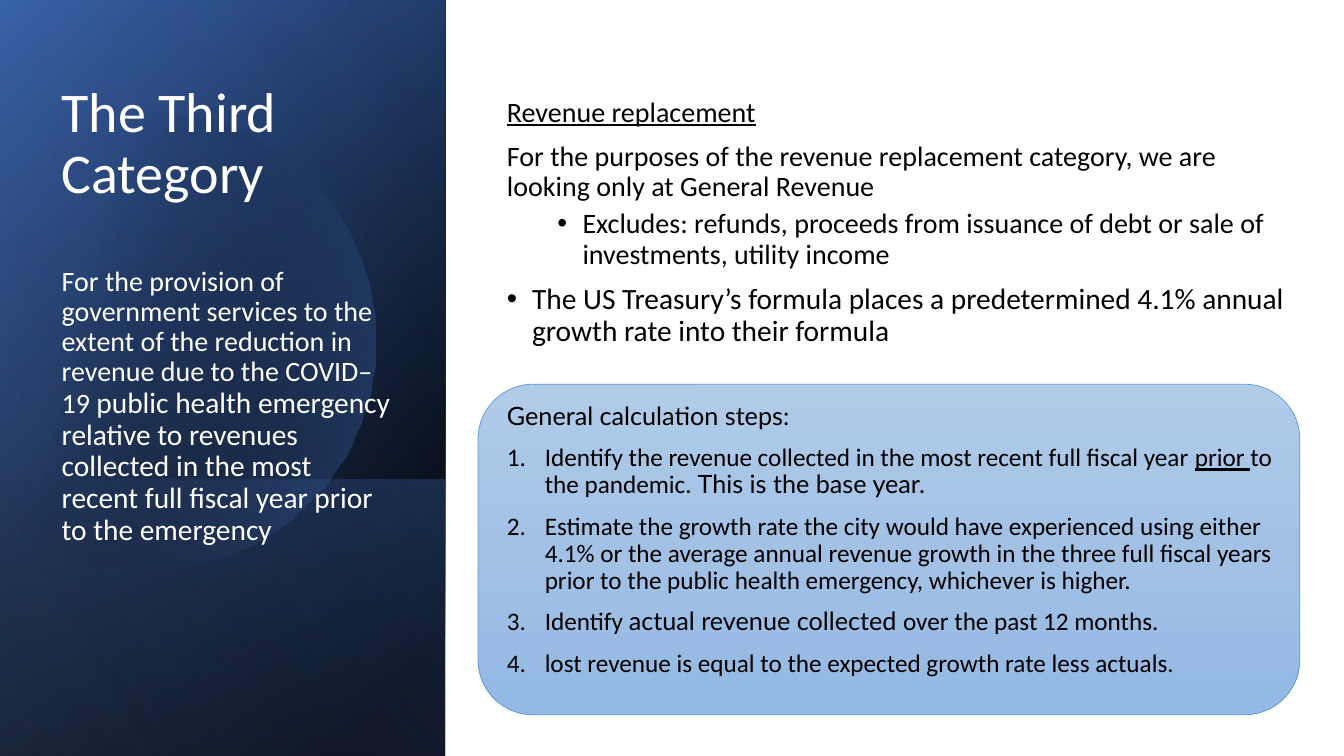
from math import cos, radians, sin

from lxml import etree
from pptx import Presentation
from pptx.dml.color import RGBColor
from pptx.enum import shapes, text
from pptx.oxml import ns
from pptx.util import Pt

BLACK = RGBColor(0x00, 0x00, 0x00)
WHITE = RGBColor(0xFF, 0xFF, 0xFF)
NAVY = RGBColor(0x2F, 0x55, 0x97)
BLUE = RGBColor(0x44, 0x72, 0xC4)
PALE_BLUE = RGBColor(0x8F, 0xAA, 0xDC)
PANEL_TOP = RGBColor(0xB1, 0xCB, 0xE9)
PANEL_MID = RGBColor(0xA3, 0xC1, 0xE5)
PANEL_BOTTOM = RGBColor(0x93, 0xB9, 0xE4)
PANEL_LINE = RGBColor(0x5B, 0x9B, 0xD5)

SLIDE_W, SLIDE_H = 960, 540
SIDE_W = 318


def add_child(parent, tag, **attrs):
    """Append a drawing element and return it."""
    child = etree.SubElement(parent, ns.qn(tag))
    for name, value in attrs.items():
        child.set(name, str(value))
    return child


def set_gradient(sp, stops, angle):
    """Fill a shape with (position, colour, opacity) stops, in percent."""
    sp.fill.gradient()
    grad = sp._element.spPr.find(ns.qn("a:gradFill"))
    stop_list = grad.find(ns.qn("a:gsLst"))
    for stop in list(stop_list):
        stop_list.remove(stop)
    for position, colour, opacity in stops:
        gs = add_child(stop_list, "a:gs", pos=position * 1000)
        clr = add_child(gs, "a:srgbClr", val=colour)
        if opacity < 100:
            add_child(clr, "a:alpha", val=opacity * 1000)
    grad.find(ns.qn("a:lin")).set("ang", str(angle * 60000))


def add_box(slide, left, top, width, height, kind=shapes.MSO_SHAPE.RECTANGLE):
    """Add a plain white shape without line or shadow."""
    sp = slide.shapes.add_shape(kind, Pt(left), Pt(top), Pt(width), Pt(height))
    sp.shadow.inherit = False
    sp.fill.solid()
    sp.fill.fore_color.rgb = WHITE
    sp.line.fill.background()
    return sp


def add_side_layer(slide, top, stops, angle):
    """Add a turned gradient layer from top down to the slide's lower edge."""
    height = SLIDE_H - top
    sp = add_box(slide, (SIDE_W - height) / 2, top + (height - SIDE_W) / 2, height, SIDE_W)
    sp.rotation = 90
    sp._element.spPr.xfrm.set("flipH", "1")
    set_gradient(sp, stops, angle)


def add_disc(slide, cx, cy, radius, stops, angle):
    """Add a disc that is cut off on its left side."""
    points = [(cx + radius * cos(radians(a)), cy + radius * sin(radians(a)))
              for a in range(-135, 136, 3)]
    builder = slide.shapes.build_freeform(*points[0], scale=Pt(1))
    builder.add_line_segments(points[1:], close=True)
    sp = builder.convert_to_shape()
    sp.shadow.inherit = False
    sp.line.fill.background()
    set_gradient(sp, stops, angle)


def add_text_frame(slide, left, top, width, height, anchor):
    """Add a wrapping text box and return its text frame."""
    tf = slide.shapes.add_textbox(Pt(left), Pt(top), Pt(width), Pt(height)).text_frame
    tf.word_wrap = True
    tf.vertical_anchor = anchor
    return tf


def add_paragraph(tf, *runs, size=20, color=BLACK, before=10, margin=0, hanging=0,
                  level=0, bullet=None):
    """Add a paragraph of strings or (string, format) runs."""
    p = tf.paragraphs[0] if not tf.paragraphs[0].runs else tf.add_paragraph()
    p.level = level
    p.line_spacing = 0.9
    p.space_before = Pt(before)
    pPr = p._p.get_or_add_pPr()
    pPr.set("marL", str(Pt(margin)))
    pPr.set("indent", str(-Pt(hanging)))
    if bullet == "number":
        add_child(pPr, "a:buFont", typeface="+mj-lt")
        add_child(pPr, "a:buAutoNum", type="arabicPeriod")
    elif bullet:
        add_child(pPr, "a:buFont", typeface="Arial")
        add_child(pPr, "a:buChar", char=bullet)
    for run in runs:
        words, style = (run, {}) if isinstance(run, str) else run
        r = p.add_run()
        r.text = words
        r.font.name = style.get("font", "Calibri")
        r.font.size = Pt(style.get("size", size))
        r.font.underline = style.get("underline", False)
        r.font.color.rgb = color


def add_side_panel(slide):
    """Draw the dark left panel with its title and summary."""
    full = 0
    add_side_layer(slide, full, [(8, BLACK, 100), (100, NAVY, 100)], 50)
    add_side_layer(slide, full, [(0, BLACK, 0), (99, BLUE, 46)], 30)
    add_side_layer(slide, 342.5, [(2, BLUE, 29), (100, BLACK, 30)], 130)
    add_disc(slide, 104.5, 243.5, 164, [(29, BLACK, 0), (100, BLUE, 43)], 14)
    add_side_layer(slide, full, [(0, BLACK, 0), (99, PALE_BLUE, 11)], 120)
    tf = add_text_frame(slide, 37, 46, 252, 348, text.MSO_ANCHOR.BOTTOM)
    add_paragraph(tf, "The Third Category", size=40, color=WHITE, before=0)
    add_paragraph(
        tf,
        "For the provision of government services to the extent of the reduction in "
        "revenue due to the COVID–19 ",
        ("public health emergency relative to revenues collected in the most recent "
         "full fiscal year prior to the emergency", {"size": 21}),
        color=WHITE, before=44)


def add_body(slide):
    """Draw the calculation panel and the explanation over it."""
    panel = add_box(slide, 341.5, 274.5, 587, 236, shapes.MSO_SHAPE.ROUNDED_RECTANGLE)
    set_gradient(panel, [(0, PANEL_TOP, 100), (50, PANEL_MID, 100),
                         (100, PANEL_BOTTOM, 100)], 90)
    panel.line.color.rgb = PANEL_LINE
    panel.line.width = Pt(0.5)

    tf = add_text_frame(slide, 355, 31.5, 574.5, 491, text.MSO_ANCHOR.MIDDLE)
    add_paragraph(tf, ("Revenue replacement", {"underline": True}))
    add_paragraph(tf, "For the purposes of the revenue replacement category, we are "
                      "looking only at General Revenue")
    add_paragraph(tf, "Excludes: refunds, proceeds from issuance of debt or sale of "
                      "investments, utility income",
                  before=5, margin=54, hanging=18, level=1, bullet="•")
    add_paragraph(tf, "The US Treasury’s formula places a predetermined 4.1% annual "
                      "growth rate into their formula",
                  size=21, margin=18, hanging=18, bullet="•")
    lato = {"font": "Lato"}
    add_paragraph(tf, ("General calculation steps:", lato), size=18, before=40)
    steps = [
        ["Identify the revenue collected in the most recent full fiscal year ",
         ("prior ", {"underline": True}), "to the pandemic. ",
         ("This is the base year.", lato)],
        ["Estimate the growth rate the city would have experienced using either 4.1% or "
         "the average annual revenue growth in the three full fiscal years prior to the "
         "public health emergency, whichever is higher."],
        ["Identify ", ("actual revenue collected ", lato), "over the past 12 months."],
        ["lost revenue is equal to the expected growth rate less actuals."],
    ]
    for step in steps:
        add_paragraph(tf, *step, size=18, margin=27, hanging=27, bullet="number")


def main():
    """Build the slide and save it."""
    prs = Presentation()
    prs.slide_width, prs.slide_height = Pt(SLIDE_W), Pt(SLIDE_H)
    slide = prs.slides.add_slide(prs.slide_layouts[6])
    add_box(slide, 0, 0, SLIDE_W, SLIDE_H)
    add_side_panel(slide)
    add_body(slide)
    prs.save("out.pptx")


if __name__ == "__main__":
    main()
